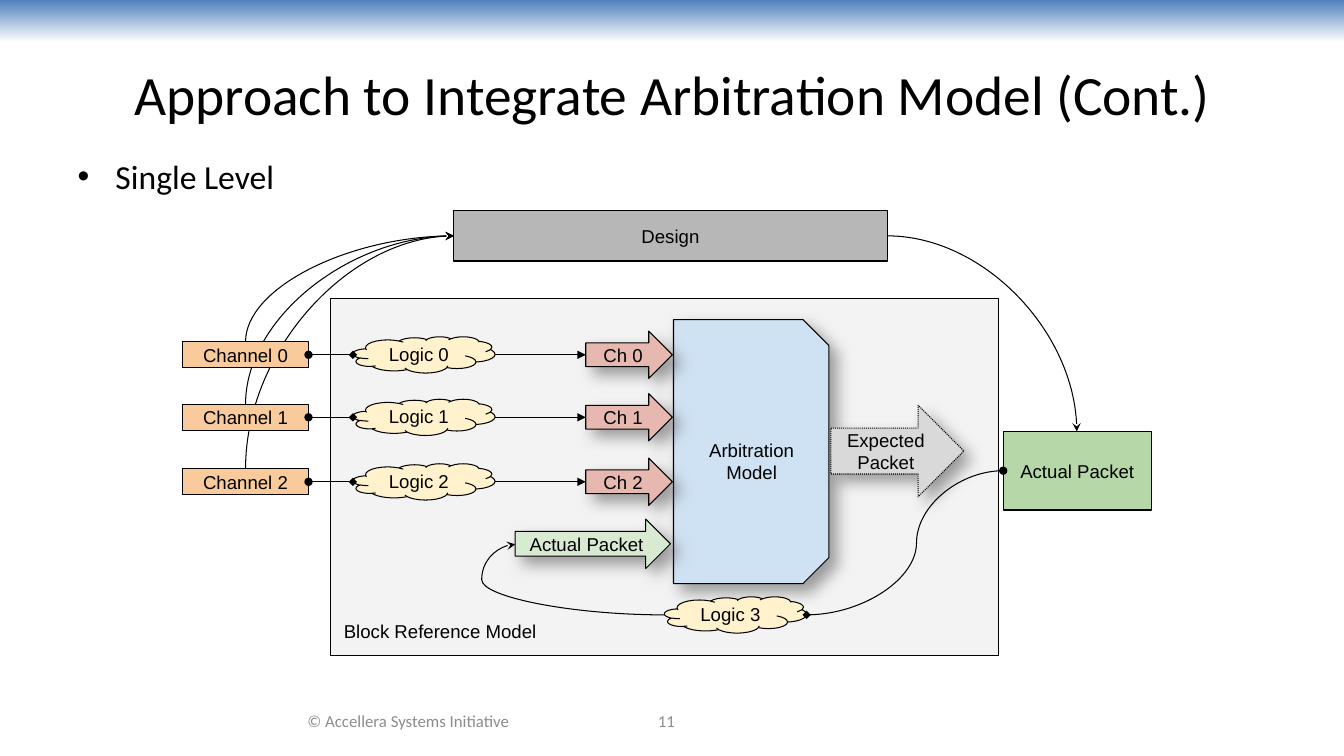
from dataclasses import dataclass

from lxml import etree
from pptx import Presentation
from pptx.dml.color import RGBColor
from pptx.enum import dml, shapes, text
from pptx.oxml import ns
from pptx.util import Inches, Pt


@dataclass(frozen=True)
class Theme:
    ink: str = "000000"
    footer: str = "8C8C8C"
    band: str = "4F81BD"
    paper: str = "FFFFFF"
    design: str = "B7B7B7"
    block: str = "F3F3F3"
    model: str = "CFE2F3"
    channel: str = "F9CB9C"
    logic: str = "FFF2CC"
    request: str = "E6B8AF"
    expected: str = "D9D9D9"
    actual: str = "B6D7A8"
    actual_input: str = "D9EAD3"
    shadow: str = "434343"
    heading_font: str = "Calibri"
    label_font: str = "Arial"
    title_size: float = 39.6
    body_size: float = 24
    label_size: float = 13.3
    footer_size: float = 12
    line_width: float = 0.75


theme = Theme()
kinds = shapes.MSO_SHAPE
middle, top, bottom = (text.MSO_ANCHOR.MIDDLE, text.MSO_ANCHOR.TOP,
                       text.MSO_ANCHOR.BOTTOM)
center, left = text.PP_ALIGN.CENTER, text.PP_ALIGN.LEFT

presentation = Presentation()
presentation.slide_width, presentation.slide_height = Inches(13.33), Inches(7.5)
slide = presentation.slides.add_slide(presentation.slide_layouts[1])


def add_box(kind, frame, fill, label="", anchor=middle, align=center, shadow=False):
    """Add an outlined, labelled shape; a kind of None gives a plain text box."""
    frame = [Inches(length) for length in frame]
    if kind is None:
        shape = slide.shapes.add_textbox(*frame)
    else:
        shape = slide.shapes.add_shape(kind, *frame)
        shape.fill.solid()
        shape.fill.fore_color.rgb = RGBColor.from_string(fill)
        shape.line.color.rgb = RGBColor.from_string(theme.ink)
        shape.line.width = Pt(theme.line_width)
        shape.shadow.inherit = False
    if shadow:
        effects = shape.element.spPr.find(ns.qn("a:effectLst"))
        outer = etree.SubElement(effects, ns.qn("a:outerShdw"), blurRad=str(Pt(11.25)),
                                 dist=str(Pt(7.5)), dir=str(44 * 60000),
                                 algn="bl", rotWithShape="0")
        color = etree.SubElement(outer, ns.qn("a:srgbClr"), val=theme.shadow)
        etree.SubElement(color, ns.qn("a:alpha"), val="50000")
    if label:
        frame = shape.text_frame
        frame.word_wrap = True
        frame.vertical_anchor = anchor
        frame.margin_left = frame.margin_right = Inches(0.13)
        frame.margin_top = frame.margin_bottom = Inches(0.13)
        paragraph = frame.paragraphs[0]
        paragraph.alignment = align
        run = paragraph.add_run()
        run.text = label
        run.font.name, run.font.size = theme.label_font, Pt(theme.label_size)
        run.font.color.rgb = RGBColor.from_string(theme.ink)
    return shape


def add_link(frame, tail, head="none", bend=None, rotation=0, flips="", adjust=None):
    """Add a connector in its unrotated frame; bend names the curved preset."""
    x, y, width, height = frame
    kind = shapes.MSO_CONNECTOR.CURVE if bend else shapes.MSO_CONNECTOR.STRAIGHT
    connector = slide.shapes.add_connector(
        kind, Inches(x), Inches(y), Inches(x + width), Inches(y + height))
    connector.line.color.rgb = RGBColor.from_string(theme.ink)
    connector.line.width = Pt(theme.line_width)
    properties = connector.element.spPr
    line = properties.find(ns.qn("a:ln"))
    etree.SubElement(line, ns.qn("a:headEnd"), type=head)
    etree.SubElement(line, ns.qn("a:tailEnd"), type=tail)
    etree.SubElement(properties, ns.qn("a:effectLst"))
    if bend:
        transform = properties.find(ns.qn("a:xfrm"))
        transform.set("rot", str(rotation * 60000))
        for flip in flips:
            transform.set("flip" + flip, "1")
        geometry = properties.find(ns.qn("a:prstGeom"))
        geometry.set("prst", bend)
        if adjust is not None:
            guides = geometry.find(ns.qn("a:avLst"))
            etree.SubElement(guides, ns.qn("a:gd"), name="adj1",
                             fmla=f"val {round(adjust * 100000)}")
    return connector


# Header band, title and bullet
band = slide.shapes.add_shape(kinds.RECTANGLE, 0, 0, presentation.slide_width, Inches(0.42))
band.shadow.inherit = False
band.line.fill.background()
band.fill.gradient()
band.fill.gradient_angle = 270
for stop, position, color in zip(band.fill.gradient_stops, (0, 1), (theme.band, theme.paper)):
    stop.position = position
    stop.color.rgb = RGBColor.from_string(color)

title, body = slide.shapes.title, slide.placeholders[1]
for placeholder, y, height, anchor, words, size in (
        (title, 0.3, 1.25, middle, "Approach to Integrate Arbitration Model (Cont.)",
         theme.title_size),
        (body, 1.5, 0.51, top, "Single Level", theme.body_size)):
    placeholder.left, placeholder.top = Inches(0.67), Inches(y)
    placeholder.width, placeholder.height = Inches(12), Inches(height)
    placeholder.text_frame.vertical_anchor = anchor
    placeholder.text_frame.auto_size = text.MSO_AUTO_SIZE.NONE
    paragraph = placeholder.text_frame.paragraphs[0]
    paragraph.space_before = Pt(0)
    run = paragraph.add_run()
    run.text = words
    run.font.name, run.font.size = theme.heading_font, Pt(size)
    run.font.color.rgb = RGBColor.from_string(theme.ink)

# Footer
for x, width, words in ((2.44, 3.22, "© Accellera Systems Initiative"), (5.33, 2.56, "11")):
    footer = add_box(None, (x, 6.95, width, 0.4), None, words)
    font = footer.text_frame.paragraphs[0].runs[0].font
    font.name, font.size = theme.heading_font, Pt(theme.footer_size)
    font.color.rgb = RGBColor.from_string(theme.footer)

# Curves from the channels up to the design, behind the block
lanes = (3.52, 4.14, 4.78)
channel_x, channel_width, channel_height = 1.81, 1.25, 0.26
design_x, design_y = 4.5, 2.34
channel_middle = channel_x + channel_width / 2
for lane in lanes:
    rise = lane - channel_height / 2 - design_y
    run_length = design_x - channel_middle
    add_link(((channel_middle + design_x - rise) / 2, design_y + (rise - run_length) / 2,
              rise, run_length), "stealth", bend="curvedConnector2", rotation=90, flips="HV")

# Block reference model and arbitration model
add_box(kinds.RECTANGLE, (3.28, 2.96, 6.62, 3.54), theme.block,
        "Block Reference Model", anchor=bottom, align=left)
model = add_box(kinds.SNIP_2_SAME_RECTANGLE, (6.14, 3.71, 2.62, 1.54), theme.model, shadow=True)
model.rotation = 90
model.adjustments[0], model.adjustments[1] = 0.167, 0
add_box(None, (6.71, 4.22, 1.49, 0.72), None, "Arbitration Model", anchor=top)
expected = add_box(kinds.RIGHT_ARROW, (8.24, 4.02, 1.32, 0.91), theme.expected,
                   "Expected Packet", shadow=True)
expected.line.dash_style = dml.MSO_LINE.ROUND_DOT
add_box(kinds.RIGHT_ARROW, (5.11, 5.15, 1.54, 0.49), theme.actual_input,
        "Actual Packet", shadow=True)

# One lane per channel: channel, logic cloud, request arrow
cloud_x, cloud_width, cloud_height = 3.5, 1.41, 0.36
request_x, request_height = 5.81, 0.47
cloud_end = cloud_x + cloud_width
for number, lane in enumerate(lanes):
    add_box(kinds.RIGHT_ARROW, (request_x, lane - request_height / 2, 0.86, request_height),
            theme.request, f"Ch {number}", shadow=True)
    add_box(kinds.CLOUD, (cloud_x, lane - cloud_height / 2, cloud_width, cloud_height),
            theme.logic, f"Logic {number}")
    channel = add_box(kinds.RECTANGLE,
                      (channel_x, lane - channel_height / 2, channel_width, channel_height),
                      theme.channel, f"Channel {number}")
    channel_end = channel_x + channel_width
    link = add_link((channel_end, lane, cloud_x - channel_end, 0), "diamond", head="oval")
    link.begin_connect(channel, 3)
    add_link((cloud_end, lane, request_x - cloud_end, 0), "triangle")

# Design output and its way back into the model
add_box(kinds.CLOUD, (6.59, 5.92, cloud_width, cloud_height), theme.logic, "Logic 3")
add_box(kinds.RECTANGLE, (9.95, 4.28, 1.47, 0.78), theme.actual, "Actual Packet")
add_link((8, 4.67, 1.95, 1.43), "diamond", head="oval", bend="curvedConnector3",
         rotation=180, flips="V", adjust=0.441)
add_link((5.11, 5.4, 1.48, 0.7), "stealth", bend="curvedConnector3",
         rotation=180, adjust=1.225)
add_box(kinds.RECTANGLE, (design_x, 2.09, 4.3, 0.5), theme.design, "Design")
add_link((8.8, design_y, 1.88, 1.94), "stealth", bend="curvedConnector2")

presentation.save("out.pptx")
